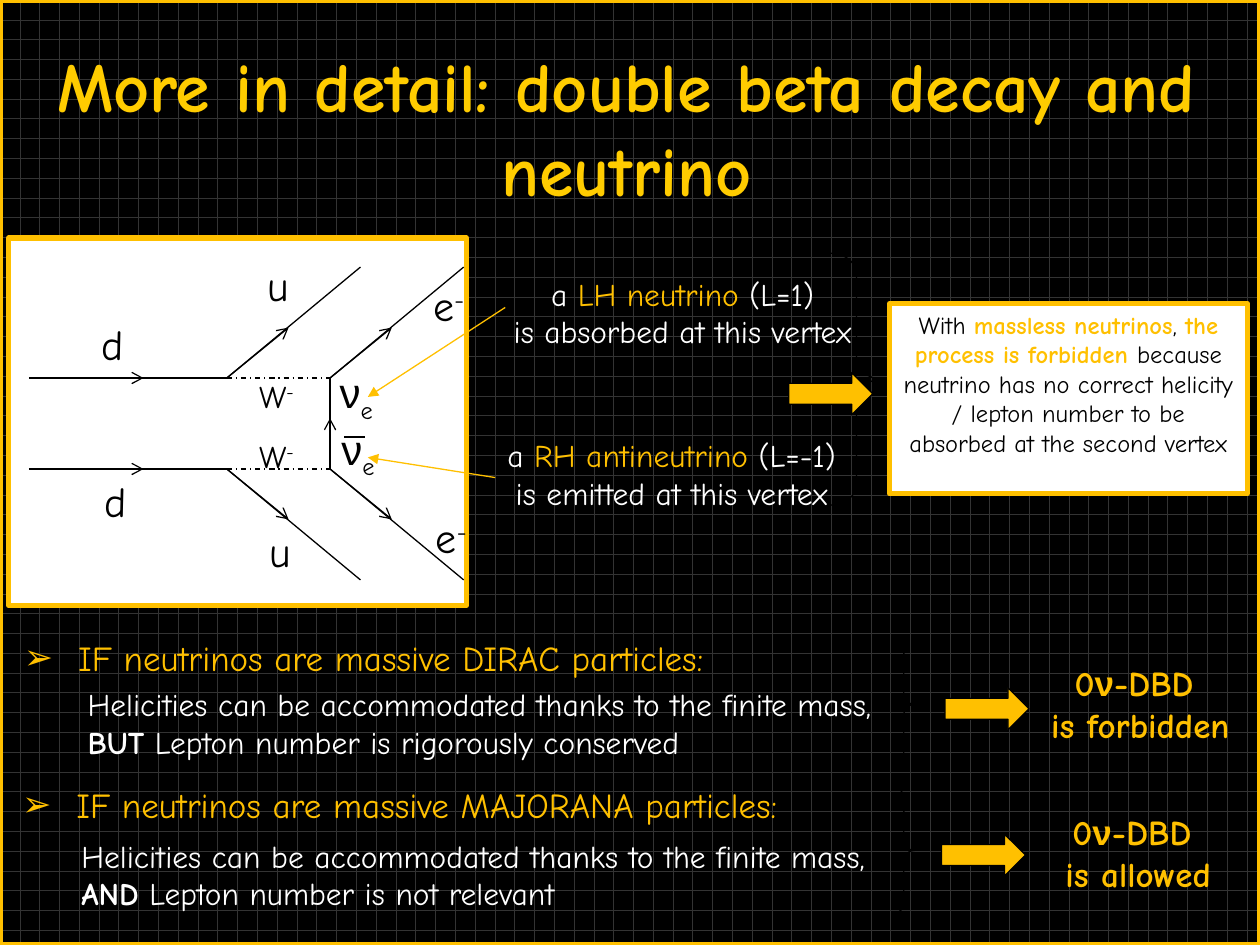
from typing import NamedTuple

from lxml.etree import SubElement as Sub
from pptx import Presentation
from pptx.dml.color import RGBColor as RGB
from pptx.enum.dml import MSO_LINE as Dash, MSO_PATTERN as Pattern
from pptx.enum.shapes import MSO_CONNECTOR as Conn, MSO_SHAPE as Kind
from pptx.enum.text import MSO_ANCHOR as Anchor, MSO_AUTO_SIZE as Fit, PP_ALIGN as Align
from pptx.oxml.ns import qn
from pptx.util import Pt

BLACK = RGB(0, 0, 0)
WHITE = RGB(255, 255, 255)
GOLD = RGB(0xFF, 0xC0, 0)
YELLOW = RGB(0xFF, 0xCC, 0)
GRID = RGB(0x33, 0x33, 0x33)
FACE = "Comic Neue"
MID, GAP = 242, 26
DOWN, VERTEX, MEET = 16.5, 129.6, 188.6


class Run(NamedTuple):
    text: str
    color: RGB = BLACK
    bold: bool = False
    face: str = FACE
    base: int = 0


class Box(NamedTuple):
    left: float
    top: float
    width: float
    height: float


class Label(NamedTuple):
    box: Box
    runs: list
    size: float


class Case(NamedTuple):
    kind: str
    word: str
    rest: str
    verdict: str
    head: Box
    body: Box
    result: Box
    brace: Box
    arrow: Box


def write(frame, lines: list, size: float, align=Align.LEFT, wrap=False, indent=0, bullet=""):
    """Fill a text frame with one paragraph for each list of runs."""
    look = dict(word_wrap=wrap, auto_size=Fit.NONE if wrap else Fit.SHAPE_TO_FIT_TEXT,
                vertical_anchor=Anchor.TOP)
    for key, value in look.items():
        setattr(frame, key, value)
    for i, runs in enumerate(lines):
        para = frame.add_paragraph() if i else frame.paragraphs[0]
        para.alignment = align
        props = para._p.get_or_add_pPr()
        if indent:
            props.set("marL", str(Pt(indent)))
            props.set("indent", str(-Pt(indent) if bullet else 0))
        if bullet:
            Sub(Sub(props, qn("a:buClr")), qn("a:srgbClr"), val=str(GOLD))
            Sub(props, qn("a:buFont"), typeface="Arial")
            Sub(props, qn("a:buChar"), char=bullet)
        for item in runs:
            run = para.add_run()
            run.text = item.text
            for key, value in dict(size=Pt(size), name=item.face, bold=item.bold).items():
                setattr(run.font, key, value)
            run.font.color.rgb = item.color
            if item.base:
                run._r.get_or_add_rPr().set("baseline", str(item.base * 1000))


def text(slide, box: Box, lines: list, size: float, **style):
    write(slide.shapes.add_textbox(*map(Pt, box)).text_frame, lines, size, **style)


def shape(slide, kind, box: Box, fill=None, line=BLACK, width=0.75, adjust=()):
    item = slide.shapes.add_shape(kind, *map(Pt, box))
    item.shadow.inherit = False
    if fill is None:
        item.fill.background()
    else:
        item.fill.solid()
        item.fill.fore_color.rgb = fill
    item.line.color.rgb = line
    item.line.width = Pt(width)
    for i, value in enumerate(adjust):
        item.adjustments[i] = value
    return item


def line(slide, x1, y1, x2, y2, color=BLACK, head="", dash=None):
    item = slide.shapes.add_connector(Conn.STRAIGHT, *map(Pt, (x1, y1, x2, y2)))
    item.line.color.rgb = color
    item.line.width = Pt(0.75)
    if dash:
        item.line.dash_style = dash
    props = item._element.spPr
    if head:
        Sub(props.find(qn("a:ln")), qn("a:tailEnd"), type=head)
    Sub(props, qn("a:effectLst"))


def arrow(slide, box: Box):
    shape(slide, Kind.RIGHT_ARROW, box, GOLD)


def draw_decay(slide):
    """Two mirrored quark lines joined by the neutrino line."""
    shape(slide, Kind.RECTANGLE, Box(5, 136, 261.5, 210), WHITE, GOLD, 3)
    for side in (-1, 1):
        y = MID + side * GAP
        line(slide, DOWN, y, VERTEX, y)
        line(slide, 52.5, y, 82, y, head="arrow")
        line(slide, VERTEX, y, MEET, y, dash=Dash.DASH_DOT)
        for x in (VERTEX, MEET):
            line(slide, x, y, x + 76.4, y + side * 63.4)
            line(slide, x, y, x + 35.3, y + side * 28.8, head="arrow")
    line(slide, MEET, MID - GAP, MEET, MID + GAP)
    line(slide, MEET, 250.5, MEET, 239, head="arrow")
    quark, up = [Run("d")], [Run("u")]
    lepton, boson = ([Run(c), Run("-", base=30)] for c in "eW")
    nu = [Run("ν", face="Arial"), Run("e", base=-25)]
    labels = [
        Label(Box(51, 178.5, 27.5, 36.5), quark, 24),
        Label(Box(52.5, 268, 27.5, 36.5), quark, 24),
        Label(Box(145.5, 144.7, 26.5, 36), up, 24),
        Label(Box(147, 296.6, 26.5, 36), up, 24),
        Label(Box(240.5, 156, 32.5, 36.5), lepton, 24),
        Label(Box(242, 288.7, 32.5, 36.5), lepton, 24),
        Label(Box(141, 246, 36.7, 29), boson, 18),
        Label(Box(141, 211.7, 36.7, 29), boson, 18),
        Label(Box(187, 206, 36, 36), nu, 24),
        Label(Box(188, 238.3, 36, 36), nu, 24),
    ]
    for item in labels:
        text(slide, item.box, [item.runs], item.size)
    line(slide, 196.6, 249.8, 208.8, 249.8)


def draw_notes(slide):
    notes = [
        (Box(272, 153.4, 236, 51), "LH neutrino", " (L=1)", "absorbed", (288.7, 175.7, 210.2, 226.8)),
        (Box(271.5, 245.5, 224.6, 51), "RH antineutrino", " (L=-1)", "emitted", (283, 272.9, 210.2, 261.4)),
    ]
    for box, name, number, verb, ends in notes:
        first = [Run("a ", WHITE), Run(name, GOLD), Run(number, WHITE)]
        text(slide, box, [first, [Run(f"is {verb} at this vertex", WHITE)]], 18, align=Align.CENTER)
        line(slide, *ends, color=GOLD, head="triangle")


def draw_case(slide, case: Case):
    title = f"IF neutrinos are massive {case.kind} particles:"
    text(slide, case.head, [[Run(title, GOLD)]], 20, indent=31, bullet="➢")
    first = [Run("Helicities can be accommodated thanks to the finite mass,", WHITE)]
    text(slide, case.body, [first, [Run(case.word, WHITE, True), Run(case.rest, WHITE)]], 18, indent=12)
    name = [Run("0", GOLD, True), Run("ν", GOLD, True, "Arial"), Run("-DBD ", GOLD, True)]
    text(slide, case.result, [name, [Run(case.verdict, GOLD, True)]], 20, align=Align.CENTER)
    shape(slide, Kind.RIGHT_BRACE, case.brace, adjust=(0.5, 0.5))
    arrow(slide, case.arrow)


def draw_callout(slide):
    shape(slide, Kind.RIGHT_BRACE, Box(474.5, 144.7, 30, 144), adjust=(0.4, 0.5))
    panel = shape(slide, Kind.RECTANGLE, Box(508.3, 173.5, 204.5, 108.7), WHITE, GOLD, 3)
    runs = [
        Run("With "), Run("massless neutrinos", GOLD, True), Run(", "),
        Run("the process is forbidden ", GOLD, True),
        Run("because neutrino has no correct helicity / lepton number to be absorbed at the second vertex"),
    ]
    write(panel.text_frame, [runs], 14, align=Align.CENTER, wrap=True)
    arrow(slide, Box(450.7, 213, 48, 24))


CASES = [
    Case("DIRAC", "BUT", " Lepton number is rigorously conserved", "is forbidden",
         Box(6.5, 360, 442, 31.5), Box(31, 388, 520.5, 51), Box(585.4, 374.4, 132.5, 55.5),
         Box(510.5, 366.5, 12, 72), Box(540, 393, 48, 24)),
    Case("MAJORANA", "AND", " Lepton number is not relevant", "is allowed",
         Box(5.5, 444.2, 497.5, 31.5), Box(27.4, 474.5, 520.5, 51), Box(595.4, 459.4, 110, 55.5),
         Box(510.5, 450, 12, 72), Box(538, 476.6, 48, 24)),
]


def main():
    deck = Presentation()
    deck.slide_width, deck.slide_height = Pt(720), Pt(540)
    slide = deck.slides.add_slide(deck.slide_layouts[6])
    back = slide.background.fill
    back.patterned()
    back.pattern = Pattern.DOTTED_GRID
    back.fore_color.rgb, back.back_color.rgb = GRID, BLACK
    shape(slide, Kind.RECTANGLE, Box(0, 0, 720, 540), line=GOLD, width=3)
    draw_decay(slide)
    draw_notes(slide)
    for case in CASES:
        draw_case(slide, case)
    title = [Run("More in detail: double beta decay and neutrino", YELLOW, True)]
    text(slide, Box(-2, 21, 720, 90), [title], 40, align=Align.CENTER, wrap=True)
    draw_callout(slide)
    deck.save("out.pptx")


if __name__ == "__main__":
    main()
